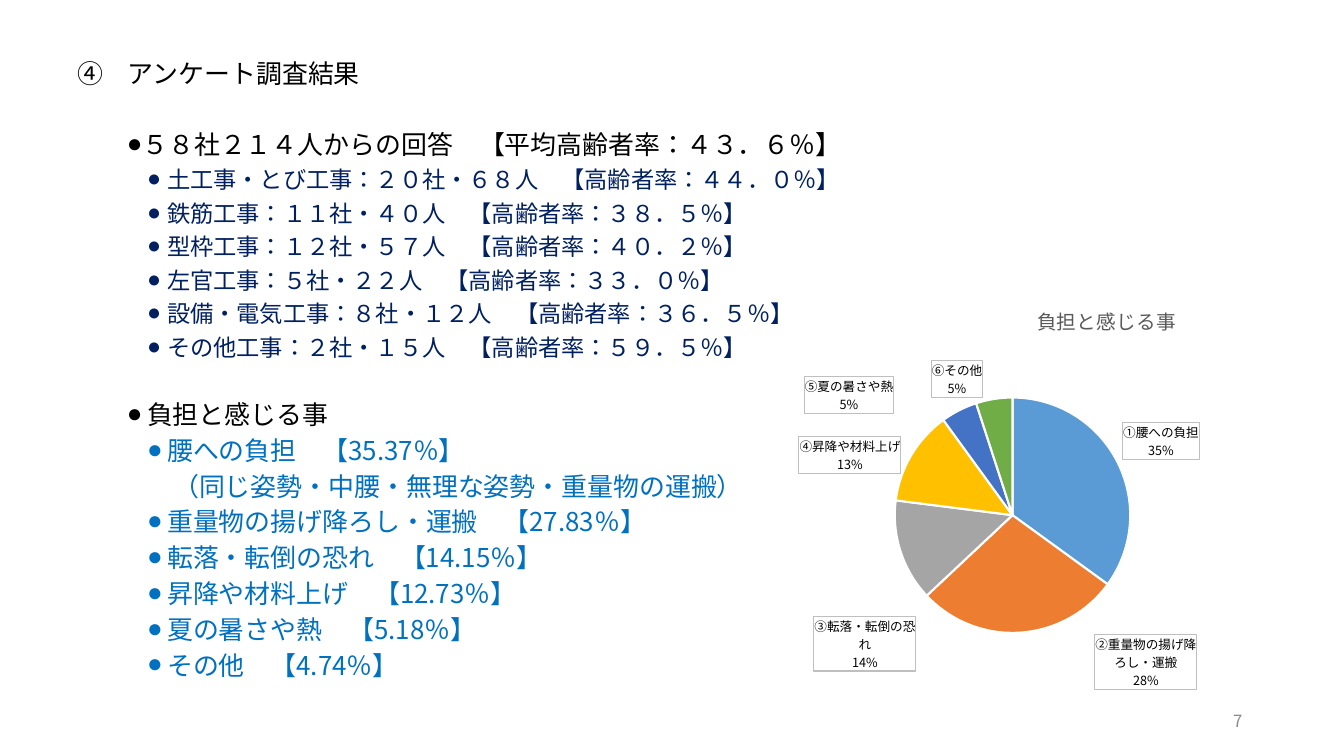
from copy import deepcopy

from lxml import etree
from pptx import Presentation
from pptx.chart.data import CategoryChartData
from pptx.dml.color import RGBColor
from pptx.enum import chart as chart_enum, text
from pptx.oxml import parse_xml
from pptx.oxml.ns import nsdecls, qn
from pptx.util import Inches, Pt

FONT = "Noto Sans CJK JP"
BLACK, NAVY, BLUE = "000000", "002060", "0070C0"
LABEL_SIZE = (
    f'<c:extLst {nsdecls("c")}><c:ext uri="{{CE6537A1-D6FC-4f65-9D91-7224C49458BB}}" '
    'xmlns:c15="http://schemas.microsoft.com/office/drawing/2012/chart"><c15:layout>'
    '<c:manualLayout><c:w val="0.18"/><c:h val="0.13"/></c:manualLayout>'
    '</c15:layout></c:ext></c:extLst>')


def color(value):
    return RGBColor.from_string(value)


def place(parent, index, **fractions):
    """Give a chart part a manual layout in fractions of the chart."""
    for old in parent.findall(qn("c:layout")):
        parent.remove(old)
    values = "".join(f'<c:{key} val="{value}"/>' for key, value in fractions.items())
    parent.insert(index, parse_xml(
        f'<c:layout {nsdecls("c")}><c:manualLayout>{values}</c:manualLayout></c:layout>'))


presentation = Presentation()
presentation.slide_width = Inches(13.33)
presentation.slide_height = Inches(7.5)
slide = presentation.slides.add_slide(presentation.slide_layouts[6])

# Survey text: wording, size, colour, left margin, hanging indent, space before
lines = [
    ("アンケート調査結果", 18.5, BLACK, 0.5, 0.5, 0),
    ("５８社２１４人からの回答　【平均高齢者率：４３．６％】", 18.5, BLACK, 0.59, 0.1, 35),
]
for trade in [
    "土工事・とび工事：２０社・６８人　【高齢者率：４４．０％】",
    "鉄筋工事：１１社・４０人　【高齢者率：３８．５％】",
    "型枠工事：１２社・５７人　【高齢者率：４０．２％】",
    "左官工事：５社・２２人　【高齢者率：３３．０％】",
    "設備・電気工事：８社・１２人　【高齢者率：３６．５％】",
    "その他工事：２社・１５人　【高齢者率：５９．５％】",
]:
    lines.append((trade, 16.6, NAVY, 0.89, 0.2, 10))
lines.append(("負担と感じる事", 18.5, BLACK, 0.69, 0.2, 33.5))
for burden in [
    "腰への負担　【35.37％】",
    "（同じ姿勢・中腰・無理な姿勢・重量物の運搬）",
    "重量物の揚げ降ろし・運搬　【27.83％】",
    "転落・転倒の恐れ　【14.15％】",
    "昇降や材料上げ　【12.73％】",
    "夏の暑さや熱　【5.18％】",
    "その他　【4.74％】",
]:
    margin, hanging = (0.95, 0) if burden.startswith("（") else (0.89, 0.2)
    lines.append((burden, 18.5, BLUE, margin, hanging, 10))

survey = slide.shapes.add_textbox(Inches(0.67), Inches(0.61), Inches(12.24), Inches(6.43))
survey.text_frame.word_wrap = True
for number, (wording, size, tint, margin, hanging, before) in enumerate(lines):
    paragraphs = survey.text_frame.paragraphs
    paragraph = survey.text_frame.add_paragraph() if number else paragraphs[0]
    paragraph.text = wording
    paragraph.line_spacing = 0.7
    paragraph.space_before = Pt(before)
    properties = paragraph._p.get_or_add_pPr()
    properties.set("marL", str(Inches(margin)))
    properties.set("indent", str(-Inches(hanging)))
    if number == 0:
        etree.SubElement(properties, qn("a:buAutoNum"), type="circleNumDbPlain", startAt="4")
    elif hanging:
        etree.SubElement(properties, qn("a:buFont"), typeface="Arial")
        etree.SubElement(properties, qn("a:buChar"), char="●")
    run = paragraph.runs[0]
    run.font.name, run.font.size = FONT, Pt(size)
    run.font.color.rgb = color(tint)
    run._r.get_or_add_rPr().set("lang", "ja-JP")

# Pie chart: category, share, colour, label shift from its outside-end place, narrow label
slices = [
    ("①腰への負担", 35, "5B9BD5", 0, 0, False),
    ("②重量物の揚げ降ろし・運搬", 28, "ED7D31", 0.24, -0.01, True),
    ("③転落・転倒の恐れ", 14, "A5A5A5", 0.04, 0.15, True),
    ("④昇降や材料上げ", 13, "FFC000", -0.01, 0.05, True),
    ("⑤夏の暑さや熱", 5, "4472C4", -0.12, 0.02, False),
    ("⑥その他", 5, "70AD47", -0.02, 0.01, False),
]
data = CategoryChartData()
data.categories = [item[0] for item in slices]
data.add_series("負担と感じる事", [item[1] for item in slices])
chart = slide.shapes.add_chart(
    chart_enum.XL_CHART_TYPE.PIE, Inches(7.24), Inches(2.86), Inches(5.19), Inches(4.17), data).chart
chart.has_legend = False
chart.font.name, chart.font.size = FONT, Pt(10)
chart.font.color.rgb = color(BLACK)

chart.has_title = True
title = chart.chart_title
title.text_frame.text = "負担と感じる事"
title_font = title.text_frame.paragraphs[0].runs[0].font
title_font.name, title_font.size, title_font.bold = FONT, Pt(14), False
title_font.color.rgb = color("595959")
place(title._element, 1, xMode="edge", yMode="edge", x=0.58, y=0.03)
plot_area = chart._chartSpace.chart.plotArea
place(plot_area, 0, layoutTarget="inner", xMode="edge", yMode="edge", x=0.31, y=0.26, w=0.46, h=0.56)

plot = chart.plots[0]
plot.vary_by_categories = True
series = plot.series[0]
labels = series.data_labels
labels.show_value = False
labels.show_category_name = labels.show_percentage = True
labels.number_format, labels.number_format_is_linked = "0%", False
labels.position = chart_enum.XL_LABEL_POSITION.OUTSIDE_END
labels.font.name, labels.font.size = FONT, Pt(9)
labels.font.color.rgb = color(BLACK)
label_group = labels._element
label_group.find(qn("c:txPr")).addprevious(parse_xml(
    f'<c:spPr {nsdecls("c", "a")}><a:solidFill><a:srgbClr val="FFFFFF"/></a:solidFill>'
    '<a:ln w="9525"><a:solidFill><a:srgbClr val="BFBFBF"/></a:solidFill></a:ln></c:spPr>'))
for leader in label_group.findall(qn("c:showLeaderLines")):
    label_group.remove(leader)
shared = list(label_group)
etree.SubElement(label_group, qn("c:showLeaderLines"), val="0")
for index, (_, _, tint, shift_x, shift_y, narrow) in enumerate(slices):
    wedge = series.points[index].format
    wedge.fill.solid()
    wedge.fill.fore_color.rgb = color(tint)
    wedge.line.color.rgb = color("FFFFFF")
    wedge.line.width = Pt(1.5)
    label = etree.Element(qn("c:dLbl"))
    etree.SubElement(label, qn("c:idx"), val=str(index))
    label.extend([deepcopy(child) for child in shared])
    if shift_x or shift_y:
        place(label, 1, x=shift_x, y=shift_y)
    if narrow:
        label.append(parse_xml(LABEL_SIZE))
    label_group.insert(index, label)

page = slide.shapes.add_textbox(Inches(9.42), Inches(6.95), Inches(3), Inches(0.4))
page.text_frame.word_wrap = True
page.text_frame.vertical_anchor = text.MSO_ANCHOR.MIDDLE
page.text_frame.text = "7"
paragraph = page.text_frame.paragraphs[0]
paragraph.alignment = text.PP_ALIGN.RIGHT
page_font = paragraph.runs[0].font
page_font.name, page_font.size = FONT, Pt(12)
page_font.color.rgb = color("8C8C8C")

# Japanese glyphs take the East Asian font
for root in (slide._element, chart._chartSpace):
    for latin in list(root.iter(qn("a:latin"))):
        latin.addnext(etree.Element(qn("a:ea"), typeface=FONT))

presentation.save("out.pptx")
